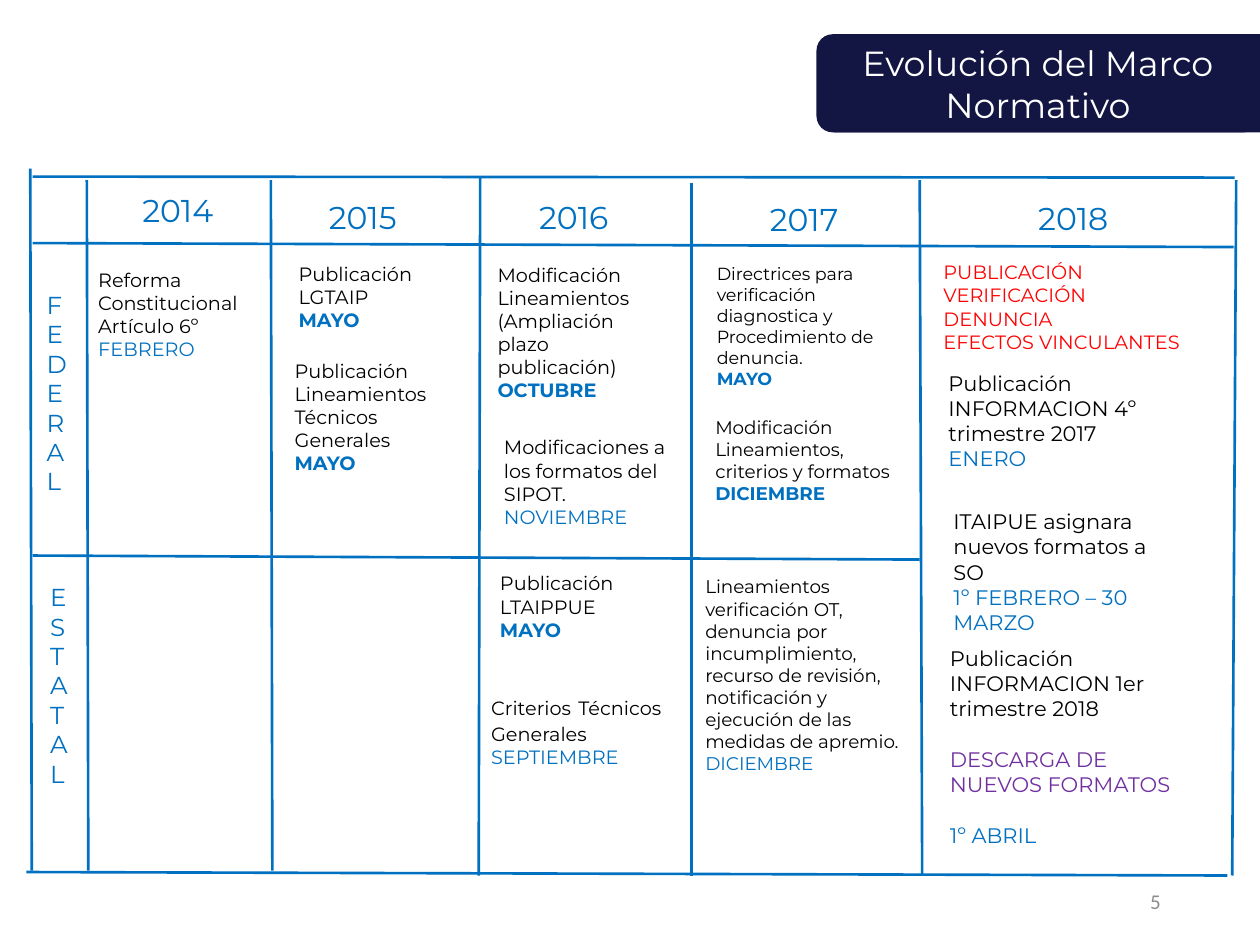
from lxml import etree
from pptx import Presentation
from pptx import util as u
from pptx.dml.color import RGBColor
from pptx.enum import shapes, text
from pptx.oxml.ns import qn

BLUE, NAVY, BLACK, WHITE = "0070C0", "131642", "000000", "FFFFFF"
RED, PURPLE, GREY = "FF0000", "7030A0", "8C8C8C"
FACE = "Montserrat"

# Grid rules: x1, y1, x2, y2 in cm
RULES = [
    (0.61, 3.4, 0.64, 17.55), (1.75, 3.63, 1.78, 17.55),
    (5.46, 3.63, 5.49, 17.55), (9.68, 3.56, 9.65, 17.65),
    (13.94, 3.68, 13.94, 17.65), (18.54, 3.63, 18.59, 17.65),
    (24.92, 3.63, 24.84, 17.65),
    (0.66, 3.56, 24.89, 3.58), (0.66, 4.9, 24.87, 4.98),
    (0.66, 11.2, 18.54, 11.28), (0.53, 17.58, 24.74, 17.65),
]

YEARS = [("2014", 2.62, 3.73), ("2015", 6.38, 3.86), ("2016", 10.62, 3.86),
         ("2017", 15.27, 3.91), ("2018", 20.68, 3.89)]

LEVELS = [("FEDERAL", 0.69, 5.72, 0.91), ("ESTATAL", 0.76, 11.61, 0.81)]

# Cell notes: box in cm, text size, black lines, month, bold month
NOTES = [
    ((1.73, 5.28, 3.73, 2.13), 11,
     ["Reforma Constitucional", "Artículo 6º"], "FEBRERO", False),
    ((5.77, 5.16, 3.45, 1.68), 11, ["Publicación LGTAIP"], "MAYO", True),
    ((5.69, 7.11, 3.71, 2.62), 11,
     ["Publicación Lineamientos Técnicos", "Generales"], "MAYO", True),
    ((9.78, 5.18, 3.94, 3.07), 11,
     ["Modificación Lineamientos", "(Ampliación plazo publicación)"],
     "OCTUBRE", True),
    ((9.91, 8.66, 3.76, 2.13), 11,
     ["Modificaciones a los formatos del SIPOT."], "NOVIEMBRE", False),
    ((9.83, 11.4, 3.96, 1.68), 11, ["Publicación LTAIPPUE"], "MAYO", True),
    ((14.2, 5.18, 4.42, 2.82), 10,
     ["Directrices para verificación diagnostica y Procedimiento de "
      "denuncia."], "MAYO", True),
    ((14.17, 8.26, 4.17, 2.49), 10.5,
     ["Modificación Lineamientos, criterios y formatos"], "DICIEMBRE", True),
    ((13.97, 11.48, 4.55, 4.75), 10.5,
     ["Lineamientos verificación OT, denuncia por incumplimiento, recurso "
      "de revisión, notificación y ejecución de las medidas de apremio."],
     "DICIEMBRE", False),
    ((18.87, 7.34, 4.83, 2.31), 12,
     ["Publicación INFORMACION 4º trimestre 2017"], "ENERO", False),
    ((18.97, 10.13, 4.83, 2.82), 12,
     ["ITAIPUE asignara nuevos formatos a SO"], "1º FEBRERO – 30 MARZO",
     False),
]


def paint(hue):
    return RGBColor.from_string(hue)


def style(font, hue, **form):
    for key, val in form.items():
        setattr(font, key, val)
    font.color.rgb = paint(hue)


def add_run(para, words, hue, size, bold=False, face=FACE):
    run = para.add_run()
    run.text = words
    style(run.font, hue, size=u.Pt(size), bold=bold, name=face)


def add_box(slide, box, wrap=True):
    frame = slide.shapes.add_textbox(*map(u.Cm, box)).text_frame
    frame.word_wrap = wrap
    return frame


def add_lines(frame, lines, size, gap=0):
    """Write (words, hue, bold) lines, parted by gap points."""
    for i, (words, hue, bold) in enumerate(lines):
        para = frame.add_paragraph() if i else frame.paragraphs[0]
        if i and gap:
            para.space_before = u.Pt(gap)
        add_run(para, words, hue, size, bold)


def add_note(slide, box, size, lines, month, bold):
    rows = [(line, BLACK, False) for line in lines]
    add_lines(add_box(slide, box), rows + [(month, BLUE, bold)], size)


def add_rule(slide, ends):
    line = slide.shapes.add_connector(
        shapes.MSO_CONNECTOR.STRAIGHT, *map(u.Cm, ends))
    line.line.color.rgb = paint(BLUE)
    line.line.width = u.Pt(1.5)
    etree.SubElement(line._element.spPr, qn("a:effectLst"))


def add_panel(slide, kind, box):
    panel = slide.shapes.add_shape(kind, *map(u.Cm, box))
    panel.shadow.inherit = False
    panel.fill.solid()
    panel.fill.fore_color.rgb = paint(NAVY)
    panel.line.fill.background()
    return panel


def add_head(slide):
    kinds = shapes.MSO_SHAPE
    side = add_panel(slide, kinds.ROUND_1_RECTANGLE, (16.81, 0.69, 8.59, 1.98))
    side._element.spPr.find(qn("a:xfrm")).set("flipH", "1")
    add_panel(slide, kinds.ROUNDED_RECTANGLE, (16.46, 0.69, 8.94, 1.98))
    title = slide.shapes.title
    for key, val in zip(("left", "top", "width", "height"),
                        (16.76, 0.71, 8.33, 1.96)):
        setattr(title, key, u.Cm(val))
    frame = title.text_frame
    frame.auto_size = text.MSO_AUTO_SIZE.NONE
    frame.vertical_anchor = text.MSO_ANCHOR.TOP
    para = frame.paragraphs[0]
    para.alignment = text.PP_ALIGN.CENTER
    add_run(para, "Evolución del Marco Normativo", WHITE, 19.9)
    # Bring the title in front of its panels
    slide.shapes._spTree.append(title._element)


def add_page(slide):
    frame = add_box(slide, (17.93, 17.65, 5.72, 1.02))
    frame.vertical_anchor = text.MSO_ANCHOR.MIDDLE
    para = frame.paragraphs[0]
    para.alignment = text.PP_ALIGN.RIGHT
    add_run(para, "5", GREY, 12, face="Calibri")


def main():
    deck = Presentation()
    deck.slide_width, deck.slide_height = u.Cm(25.4), u.Cm(19.05)
    slide = deck.slides.add_slide(deck.slide_layouts[5])
    add_head(slide)
    add_page(slide)

    # Grid with its year and level headings
    for ends in RULES:
        add_rule(slide, ends)
    for year, x, y in YEARS:
        frame = add_box(slide, (x, y, 2.24, 1.02), wrap=False)
        add_lines(frame, [(year, BLUE, False)], 18)
    for word, x, y, wide in LEVELS:
        frame = add_box(slide, (x, y, wide, 4.45))
        add_lines(frame, [(mark, BLUE, False) for mark in word], 14)

    # Cell notes
    for note in NOTES:
        add_note(slide, *note)

    # Criteria note, with a wide space inside its first line
    frame = add_box(slide, (9.65, 13.67, 3.94, 2.44))
    para = frame.paragraphs[0]
    add_run(para, "Criterios", BLACK, 11)
    add_run(para, " ", BLACK, 18, face="Calibri")
    add_run(para, "Técnicos Generales", BLACK, 11)
    add_run(frame.add_paragraph(), "SEPTIEMBRE", BLUE, 11)

    # Topics and last deadline of 2018
    topics = ["PUBLICACIÓN", "VERIFICACIÓN", "DENUNCIA", "EFECTOS VINCULANTES"]
    add_lines(add_box(slide, (18.77, 5.13, 5.87, 2.13)),
              [(topic, RED, False) for topic in topics], 11)
    add_lines(add_box(slide, (18.9, 12.88, 5.46, 4.37)), [
        ("Publicación INFORMACION 1er trimestre 2018", BLACK, False),
        ("DESCARGA DE NUEVOS FORMATOS", PURPLE, False),
        ("1º ABRIL", BLUE, False)], 12, gap=14.6)

    deck.save("out.pptx")


if __name__ == "__main__":
    main()
